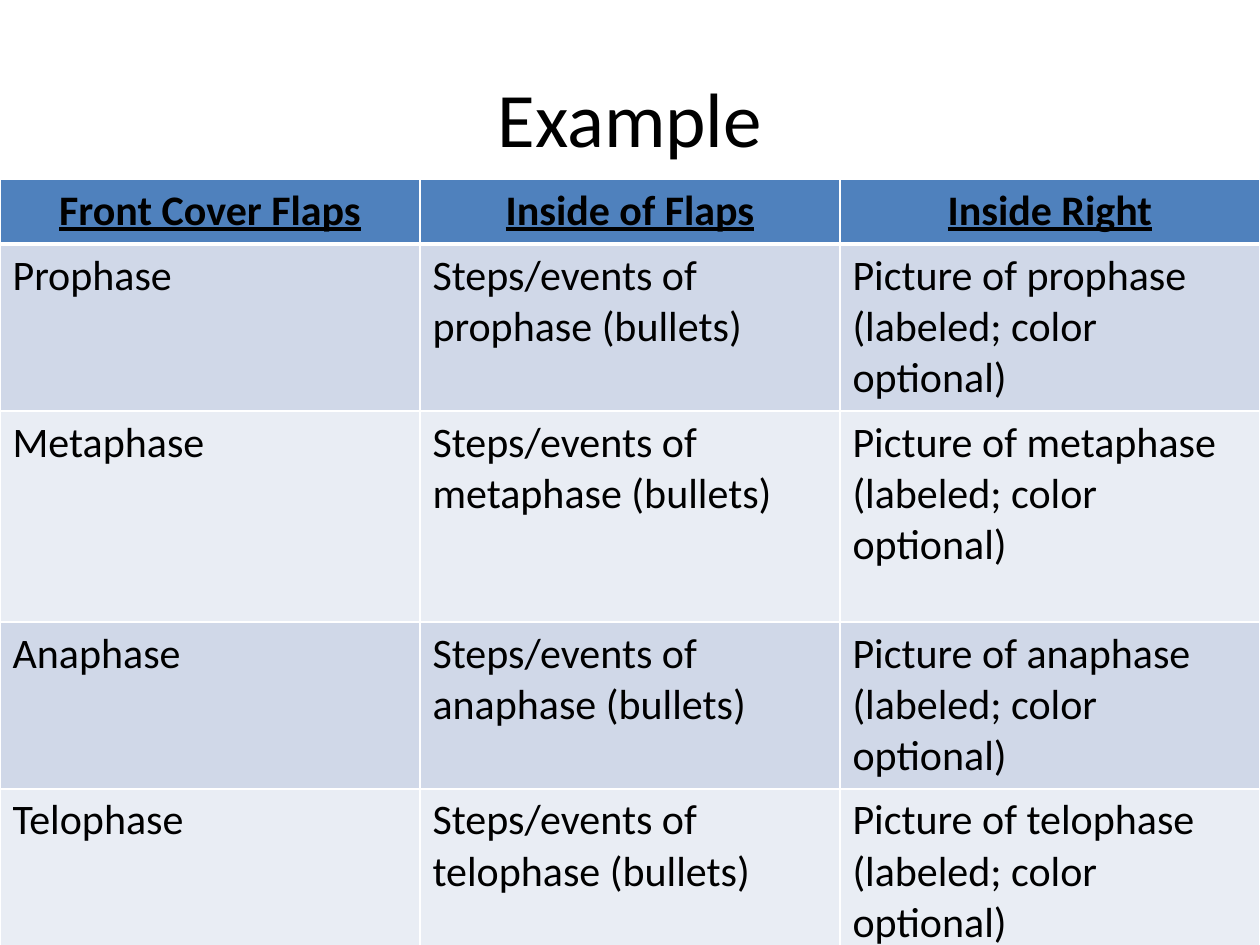
import pptx
import pptx.util
import pptx.dml.color
import pptx.enum.text
import lxml.etree

Pt = pptx.util.Pt
RGB = pptx.dml.color.RGBColor
ALIGN = pptx.enum.text.PP_ALIGN
ANCHOR = pptx.enum.text.MSO_ANCHOR

BLACK = RGB(0x00, 0x00, 0x00)
WHITE = RGB(0xFF, 0xFF, 0xFF)
BLUE = RGB(0x4F, 0x81, 0xBD)
BANDS = [RGB(0xD0, 0xD8, 0xE8), RGB(0xE9, 0xED, 0xF4)]

FONT = "Calibri"
HEADS = ["Front Cover Flaps", "Inside of Flaps", "Inside Right"]
PHASES = ["Prophase", "Metaphase", "Anaphase", "Telophase"]
HEIGHTS = [37.2, 95.4, 120.6, 95.4, 95.4]
WIDTH = 720


def write(frame, text, size=24, bold=False, line=False, align=ALIGN.LEFT):
    para = frame.paragraphs[0]
    para.alignment = align
    run = para.add_run()
    run.text = text
    font = run.font
    font.name = FONT
    font.size = Pt(size)
    font.bold = bold
    font.underline = line
    font.color.rgb = BLACK


def edge(cell, side, width):
    props = cell._tc.get_or_add_tcPr()
    name = pptx.oxml.ns.qn
    rule = lxml.etree.SubElement(props, name("a:ln" + side), w=str(Pt(width)))
    fill = lxml.etree.SubElement(rule, name("a:solidFill"))
    lxml.etree.SubElement(fill, name("a:srgbClr"), val=str(WHITE))


def paint(cell, color, base=1):
    for side, width in zip("LRTB", [1, 1, 1, base]):
        edge(cell, side, width)
    cell.fill.solid()
    cell.fill.fore_color.rgb = color


def title(slide, text):
    shape = slide.shapes.title
    shape.left, shape.top = Pt(36), Pt(21.6)
    shape.width, shape.height = Pt(648), Pt(90)
    shape.text_frame.vertical_anchor = ANCHOR.MIDDLE
    write(shape.text_frame, text, size=44, align=ALIGN.CENTER)


def chart(slide):
    frame = slide.shapes.add_table(
        len(HEIGHTS), len(HEADS), 0, Pt(102.2), Pt(WIDTH), Pt(sum(HEIGHTS)))
    table = frame.table
    for col in table.columns:
        col.width = Pt(WIDTH / len(HEADS))
    for row, height in zip(table.rows, HEIGHTS):
        row.height = Pt(height)
    for col, head in enumerate(HEADS):
        cell = table.cell(0, col)
        paint(cell, BLUE, base=3)
        write(cell.text_frame, head, bold=True, line=True, align=ALIGN.CENTER)
    for row, phase in enumerate(PHASES, 1):
        name = phase.lower()
        texts = [
            phase,
            f"Steps/events of {name} (bullets)",
            f"Picture of {name} (labeled; color optional)",
        ]
        for col, text in enumerate(texts):
            cell = table.cell(row, col)
            paint(cell, BANDS[(row - 1) % 2])
            write(cell.text_frame, text)


def main():
    deck = pptx.Presentation()
    deck.slide_width, deck.slide_height = Pt(WIDTH), Pt(540)
    slide = deck.slides.add_slide(deck.slide_layouts[5])
    title(slide, "Example")
    chart(slide)
    deck.save("out.pptx")


if __name__ == "__main__":
    main()
